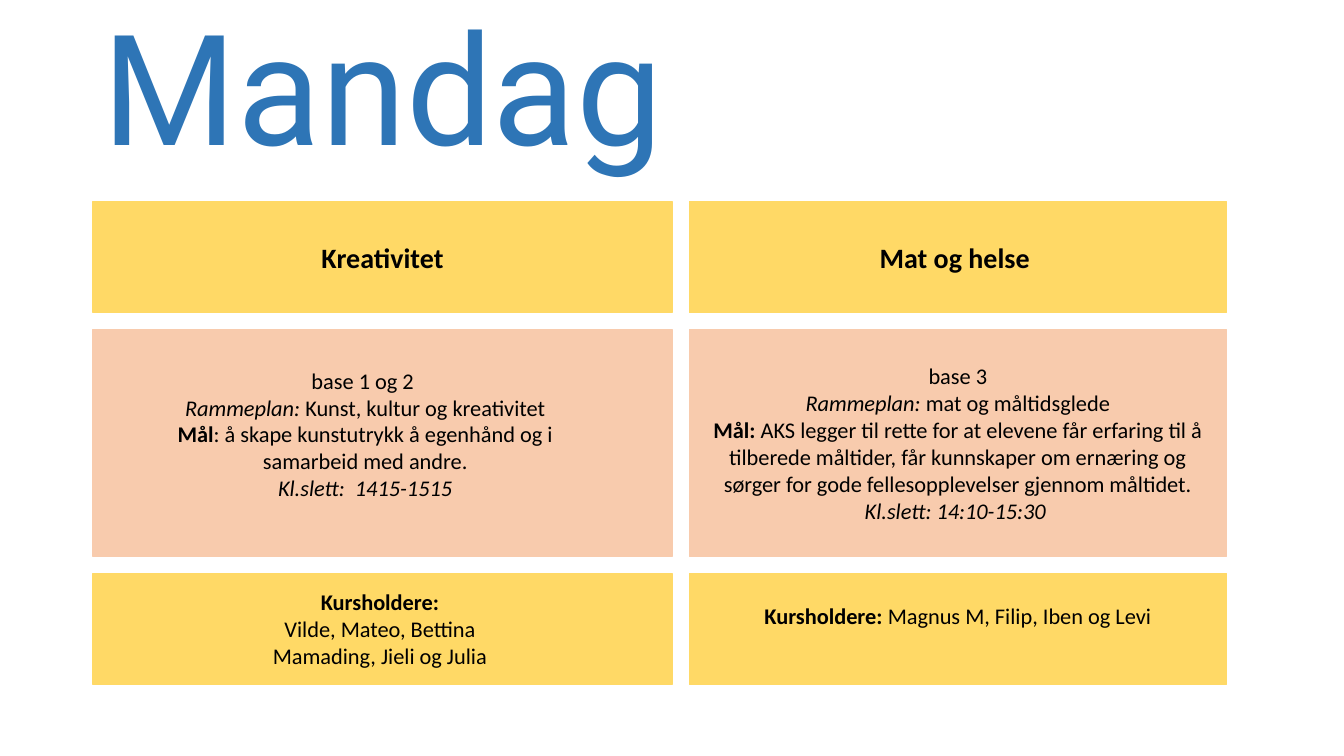
from dataclasses import dataclass
from itertools import accumulate

from pptx import Presentation
from pptx.dml.color import RGBColor
from pptx.enum.shapes import MSO_SHAPE as SHAPE
from pptx.enum.text import MSO_ANCHOR as ANCHOR, MSO_AUTO_SIZE as AUTO, PP_ALIGN as ALIGN
from pptx.slide import Slide
from pptx.text.text import TextFrame
from pptx.util import Cm, Pt

COLORS = {"title": "2E75B6", "yellow": "FFD966", "peach": "F8CBAD", "text": "000000"}
LEFT, TOP, GAP = 2.34, 5.08, 0.43
COL_WIDTHS = (14.6, 13.54)
ROW_HEIGHTS = (2.8, 5.71, 2.8)
ROW_FILLS = ("yellow", "peach", "yellow")
BOLD, ITALIC = {"bold": True}, {"italic": True}


@dataclass
class Run:
    text: str
    style: dict[str, bool] | None = None


Paragraphs = list[list[Run]]


@dataclass
class Card:
    row: int
    col: int
    paragraphs: Paragraphs
    size: int = 16
    bottom: float = 0.13


BASE_1_2: Paragraphs = [
    [Run("base 1 og 2 ")],
    [Run("Rammeplan:", ITALIC), Run(" Kunst, kultur og kreativitet")],
    [Run("Mål", BOLD), Run(": å skape kunstutrykk å egenhånd og i samarbeid med andre.")],
    [Run("Kl.slett:  1415-1515", ITALIC)],
]
CARDS = [
    Card(0, 0, [[Run("Kreativitet", BOLD)]], size=20),
    Card(0, 1, [[Run("Mat og helse ", BOLD)]], size=20),
    Card(1, 0, []),
    Card(1, 1, [
        [Run("base 3")],
        [Run("Rammeplan: ", ITALIC), Run("mat og måltidsglede")],
        [Run("Mål: ", BOLD),
         Run("AKS legger til rette for at elevene får erfaring til å tilberede måltider, "
             "får kunnskaper om ernæring og sørger for gode fellesopplevelser "
             "gjennom måltidet.")],
        [Run("Kl.slett: 14:10-15:30 ", ITALIC)],
    ]),
    Card(2, 0, [
        [Run("Kursholdere: ", BOLD)],
        [Run("Vilde, Mateo, Bettina ")],
        [Run("Mamading, Jieli og Julia ")],
    ]),
    Card(2, 1, [[Run("Kursholdere: ", BOLD), Run("Magnus M, Filip, Iben og Levi")]],
         bottom=0.8),
]


def rgb(name: str) -> RGBColor:
    return RGBColor.from_string(COLORS[name])


def set_all(obj: object, values: dict) -> None:
    for name, value in values.items():
        setattr(obj, name, value)


def starts(first: float, sizes: tuple[float, ...]) -> list[float]:
    """Return the near edge of each row or column, with GAP between them."""
    return list(accumulate((size + GAP for size in sizes[:-1]), initial=first))


def write(tf: TextFrame, paragraphs: Paragraphs, size: int) -> None:
    tf.word_wrap = True
    for i, runs in enumerate(paragraphs):
        p = tf.add_paragraph() if i else tf.paragraphs[0]
        p.alignment = ALIGN.CENTER
        for run in runs:
            r = p.add_run()
            r.text = run.text
            set_all(r.font, {"name": "Calibri", "size": Pt(size), **(run.style or {})})
            r.font.color.rgb = rgb("text")


def add_title(s: Slide, text: str) -> None:
    sp = s.shapes.title
    set_all(sp, {"left": Cm(LEFT), "top": Cm(1.02), "width": Cm(29.21), "height": Cm(2.8)})
    tf = sp.text_frame
    set_all(tf, {"text": text, "auto_size": AUTO.NONE, "vertical_anchor": ANCHOR.MIDDLE})
    p = tf.paragraphs[0]
    set_all(p, {"alignment": ALIGN.LEFT, "line_spacing": 0.9})
    set_all(p.runs[0].font, {"name": "Roboto", "size": Pt(110)})
    p.runs[0].font.color.rgb = rgb("title")


def add_card(s: Slide, card: Card) -> None:
    x = starts(LEFT, COL_WIDTHS)[card.col]
    y = starts(TOP, ROW_HEIGHTS)[card.row]
    sp = s.shapes.add_shape(SHAPE.RECTANGLE, Cm(x), Cm(y),
                            Cm(COL_WIDTHS[card.col]), Cm(ROW_HEIGHTS[card.row]))
    sp.shadow.inherit = False
    sp.fill.solid()
    sp.fill.fore_color.rgb = sp.line.color.rgb = rgb(ROW_FILLS[card.row])
    sp.line.width = Pt(1)
    set_all(sp.text_frame, {"vertical_anchor": ANCHOR.MIDDLE, "margin_bottom": Cm(card.bottom)})
    write(sp.text_frame, card.paragraphs, card.size)


def main() -> None:
    prs = Presentation()
    set_all(prs, {"slide_width": Cm(33.87), "slide_height": Cm(19.05)})
    s = prs.slides.add_slide(prs.slide_layouts.get_by_name("Title Only"))
    add_title(s, "Mandag")
    for card in CARDS:
        add_card(s, card)
    box = s.shapes.add_textbox(Cm(3.35), Cm(9.12), Cm(11.71), Cm(3.68))
    write(box.text_frame, BASE_1_2, 16)
    prs.save("out.pptx")


if __name__ == "__main__":
    main()
